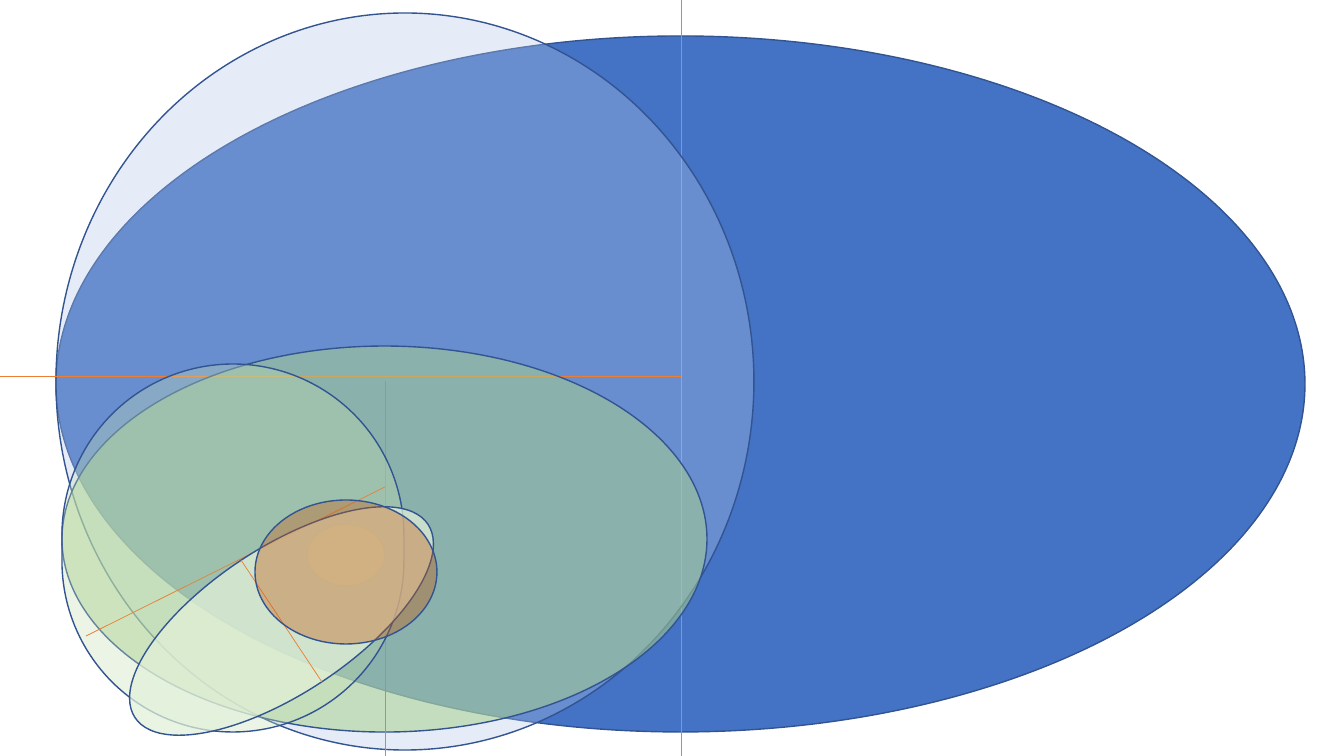
"""Build a slide of nested translucent ellipses with their guide lines."""
from dataclasses import dataclass

from lxml import etree
from pptx import Presentation
from pptx import util as u
from pptx.dml.color import RGBColor
from pptx.enum import shapes
from pptx.oxml.ns import qn

PX_PER_INCH = 100.8


@dataclass(frozen=True)
class Theme:
    """Colours and line widths of the slide."""
    blue: str = "4472C4"
    pale_blue: str = "B4C7E7"
    green: str = "A9D18E"
    light_green: str = "C5E0B4"
    pale_green: str = "E2F0D9"
    orange: str = "ED7D31"
    brown: str = "C55A11"
    outline: str = "325491"
    outline_width: float = 1
    guide_width: float = 0.5


THEME = Theme()


def px(value):
    """Turn whole pixels into EMU."""
    return u.Inches(value / PX_PER_INCH)


def set_line(item, color, width):
    """Give a shape or connector a solid line."""
    item.line.color.rgb = RGBColor.from_string(color)
    item.line.width = u.Pt(width)


def add_oval(page, place, color, opacity=100, rotation=0,
             kind=shapes.MSO_SHAPE.OVAL):
    """Add an outlined oval whose fill has the given opacity in percent."""
    oval = page.shapes.add_shape(kind, *map(px, place))
    oval.shadow.inherit = False
    oval.rotation = rotation
    oval.fill.solid()
    oval.fill.fore_color.rgb = RGBColor.from_string(color)
    if opacity < 100:
        tint = oval._element.spPr.find(qn("a:solidFill"))[0]
        etree.SubElement(tint, qn("a:alpha"), val=str(opacity * 1000))
    set_line(oval, THEME.outline, THEME.outline_width)
    return oval


def add_guide(page, start, end):
    """Add a thin straight guide line between two points."""
    guide = page.shapes.add_connector(
        shapes.MSO_CONNECTOR.STRAIGHT, *map(px, start + end))
    set_line(guide, THEME.orange, THEME.guide_width)
    etree.SubElement(guide._element.spPr, qn("a:effectLst"))


def main():
    """Build and save the deck."""
    deck = Presentation()
    deck.slide_width, deck.slide_height = px(1344), px(756)
    page = deck.slides.add_slide(deck.slide_layouts[6])

    add_oval(page, (56, 36, 1249, 696), THEME.blue)
    add_oval(page, (307, 524, 78, 62), THEME.orange)
    add_guide(page, (681, 0), (681, 762))
    add_oval(page, (56, 13, 698, 737), THEME.pale_blue, 33)
    add_guide(page, (0, 376), (681, 376))
    add_oval(page, (62, 346, 645, 386), THEME.green, 53)
    add_guide(page, (385, 381), (385, 762))
    capsule = add_oval(page, (62, 364, 342, 368), THEME.light_green, 34,
                       kind=shapes.MSO_SHAPE.ROUNDED_RECTANGLE)
    capsule.adjustments[0] = 0.5
    add_guide(page, (86, 636), (385, 487))
    add_oval(page, (106, 548, 351, 146), THEME.pale_green, 73, 326.6)
    add_guide(page, (241, 560), (322, 682))
    add_oval(page, (255, 500, 182, 144), THEME.brown, 37)

    deck.save("out.pptx")


if __name__ == "__main__":
    main()
